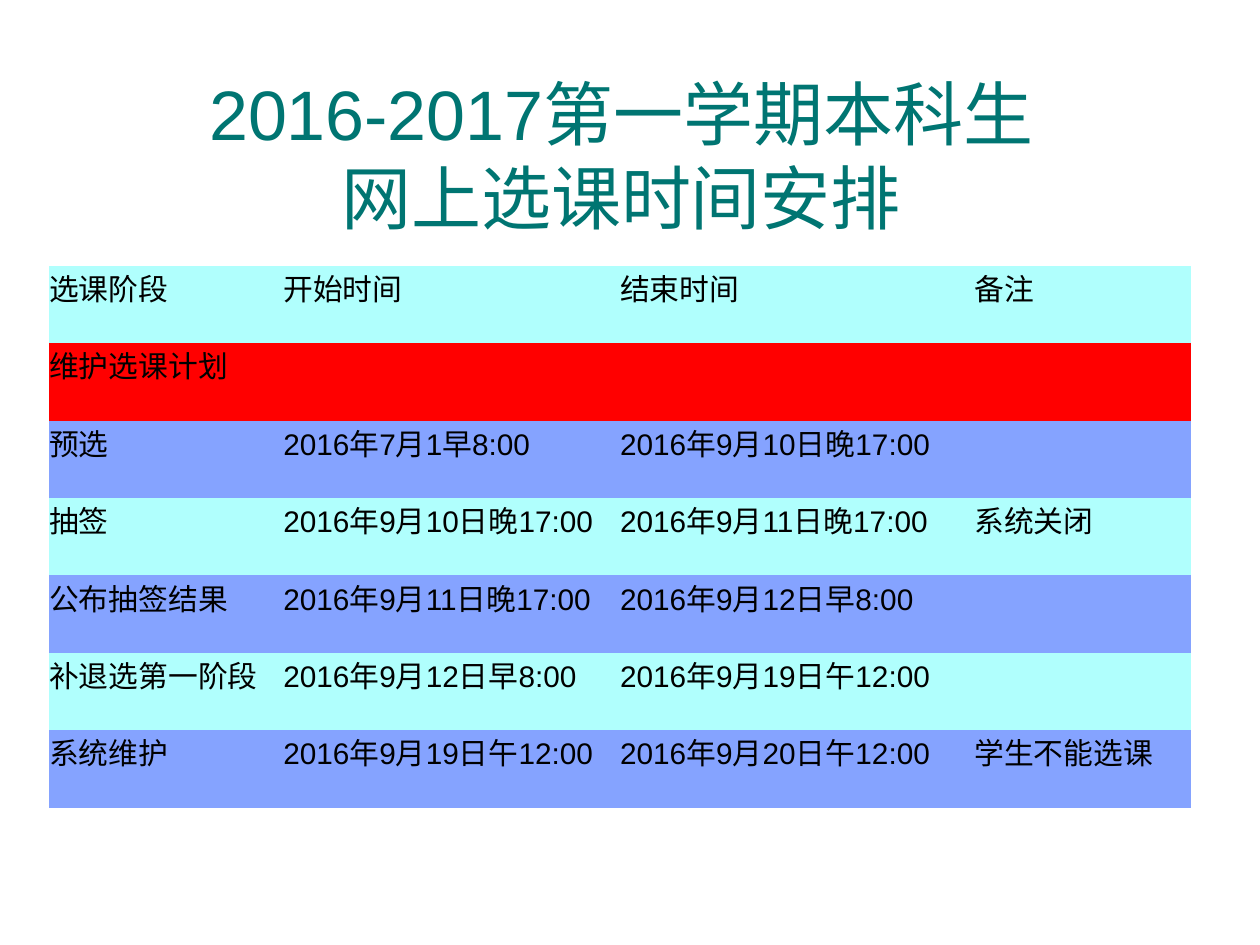
from pptx import Presentation
from pptx.dml.color import RGBColor
from pptx.enum.text import MSO_ANCHOR, MSO_AUTO_SIZE, PP_ALIGN
from pptx.oxml.ns import qn
from pptx.util import Cm, Pt

CENTER = PP_ALIGN.CENTER
MIDDLE = MSO_ANCHOR.MIDDLE
FIXED = MSO_AUTO_SIZE.NONE

TITLE = "2016-2017第一学期本科生\v网上选课时间安排"
ROWS = [
    ("aqua", "选课阶段", "开始时间", "结束时间", "备注"),
    ("red", "维护选课计划", "", "", ""),
    ("blue", "预选", "2016年7月1早8:00", "2016年9月10日晚17:00", ""),
    ("aqua", "抽签", "2016年9月10日晚17:00", "2016年9月11日晚17:00", "系统关闭"),
    ("blue", "公布抽签结果", "2016年9月11日晚17:00", "2016年9月12日早8:00", ""),
    ("aqua", "补退选第一阶段", "2016年9月12日早8:00", "2016年9月19日午12:00", ""),
    ("blue", "系统维护", "2016年9月19日午12:00", "2016年9月20日午12:00", "学生不能选课"),
]
WIDTHS = [4.72, 6.79, 7.14, 4.37]
HEIGHT = 1.56
THEME = {
    "font": "Arial",
    "title": (40, "007572"),
    "cell": (17, "000000"),
    "aqua": "B0FFFD",
    "red": "FF0000",
    "blue": "85A3FF",
}
NO_STYLE = "{2D5ABB26-0587-4C30-8999-92F81FD0307C}"


def write(frame, text, role):
    size, color = THEME[role]
    frame.text = text
    for para in frame.paragraphs:
        for run in para.runs:
            run.font.name = THEME["font"]
            run.font.size = Pt(size)
            run.font.color.rgb = RGBColor.from_string(color)


def add_title(slide):
    title = slide.shapes.title
    title.left, title.top = Cm(1.09), Cm(1.52)
    title.width, title.height = Cm(22.86), Cm(3.18)
    frame = title.text_frame
    write(frame, TITLE, "title")
    frame.word_wrap = True
    frame.auto_size = FIXED
    frame.vertical_anchor = MIDDLE
    frame.paragraphs[0].alignment = CENTER


def add_grid(slide):
    frame = slide.shapes.add_table(
        len(ROWS), len(WIDTHS), Cm(0.99), Cm(5.36),
        Cm(sum(WIDTHS)), Cm(HEIGHT * len(ROWS)))
    table = frame.table
    table.first_row = table.horz_banding = False
    frame._element.find(".//" + qn("a:tableStyleId")).text = NO_STYLE
    for col, width in zip(table.columns, WIDTHS):
        col.width = Cm(width)
    for row, (fill, *texts) in zip(table.rows, ROWS):
        row.height = Cm(HEIGHT)
        for cell, text in zip(row.cells, texts):
            cell.margin_left = cell.margin_right = 0
            cell.margin_top = cell.margin_bottom = 0
            cell.fill.solid()
            cell.fill.fore_color.rgb = RGBColor.from_string(THEME[fill])
            if text:
                write(cell.text_frame, text, "cell")


def main():
    deck = Presentation()
    deck.slide_width, deck.slide_height = Cm(25.4), Cm(19.05)
    slide = deck.slides.add_slide(deck.slide_layouts[5])
    add_title(slide)
    add_grid(slide)
    deck.save("out.pptx")


if __name__ == "__main__":
    main()
